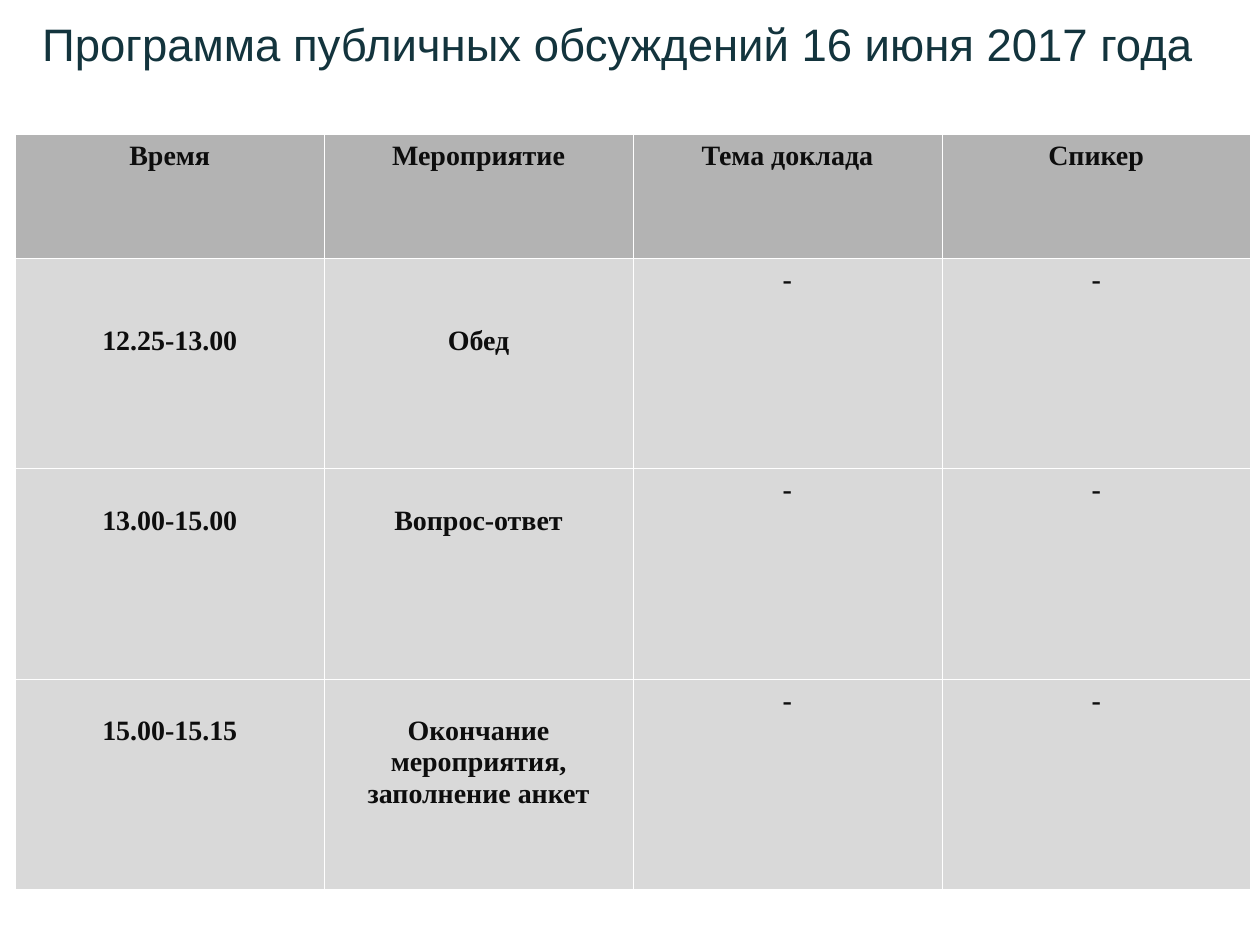
import pptx
import pptx.dml.color
import pptx.enum.text
import pptx.oxml
import pptx.oxml.ns
import pptx.util
from pptx.util import Cm, Pt

RGBColor = pptx.dml.color.RGBColor
PP_ALIGN = pptx.enum.text.PP_ALIGN
MSO_ANCHOR = pptx.enum.text.MSO_ANCHOR

TITLE_COLOR = RGBColor(0x13, 0x34, 0x3D)
TEXT_COLOR = RGBColor(0x0D, 0x0D, 0x0D)
HEADER_FILL = RGBColor(0xB3, 0xB3, 0xB3)
BODY_FILL = RGBColor(0xD9, 0xD9, 0xD9)
BORDER_COLOR = RGBColor(0xFF, 0xFF, 0xFF)

TITLE_FONT = {"name": "Arial", "size": Pt(26), "bold": False}
CELL_FONT = {"name": "Times New Roman", "size": Pt(16), "bold": True}
TITLE_FRAME = {
    "word_wrap": True,
    "auto_size": pptx.enum.text.MSO_AUTO_SIZE.NONE,
    "vertical_anchor": MSO_ANCHOR.TOP,
    "margin_left": Cm(0.25),
    "margin_right": Cm(0.25),
    "margin_top": Cm(0.13),
    "margin_bottom": Cm(0.13),
}

TITLE = "Программа публичных обсуждений 16 июня 2017 года"
HEADER = ["Время", "Мероприятие", "Тема доклада", "Спикер"]
SESSIONS = [
    ("12.25-13.00", "Обед", 2),
    ("13.00-15.00", "Вопрос-ответ", 1),
    ("15.00-15.15", "Окончание мероприятия, заполнение анкет", 1),
]
LINE_HEIGHT = 0.62


def set_format(obj, values):
    """Set each attribute in values on obj."""
    for name, value in values.items():
        setattr(obj, name, value)


def write_text(tf, text, align, font, color):
    """Write one formatted paragraph into a text frame."""
    tf.text = text
    p = tf.paragraphs[0]
    p.alignment = align
    r = p.runs[0]
    set_format(r.font, font)
    r.font.color.rgb = color


def add_borders(cell):
    """Give a cell a hairline on all four sides."""
    tcPr = cell._tc.get_or_add_tcPr()
    for side in ("lnL", "lnR", "lnT", "lnB"):
        tcPr.append(pptx.oxml.parse_xml(
            f'<a:{side} {pptx.oxml.ns.nsdecls("a")} w="762"><a:solidFill>'
            f'<a:srgbClr val="{BORDER_COLOR}"/></a:solidFill></a:{side}>'))


def fill_cell(cell, text, fill, side_margin, lines_down):
    """Format a cell and start its text the given number of lines down."""
    add_borders(cell)
    cell.fill.solid()
    cell.fill.fore_color.rgb = fill
    set_format(cell, {
        "margin_left": Cm(side_margin),
        "margin_right": Cm(side_margin),
        "margin_top": Cm(0.13 + lines_down * LINE_HEIGHT),
        "margin_bottom": Cm(0.13),
        "vertical_anchor": MSO_ANCHOR.TOP,
    })
    write_text(cell.text_frame, text, PP_ALIGN.CENTER, CELL_FONT, TEXT_COLOR)


def place_title(s, left, top, width, height):
    """Place the slide title in the given box."""
    sp = s.shapes.title
    set_format(sp, {"left": left, "top": top, "width": width, "height": height})
    set_format(sp.text_frame, TITLE_FRAME)
    write_text(sp.text_frame, TITLE, PP_ALIGN.LEFT, TITLE_FONT, TITLE_COLOR)


def add_programme(s, left, top, width, height):
    """Add the programme table in the given box."""
    rows, cols = len(SESSIONS) + 1, len(HEADER)
    table = s.shapes.add_table(rows, cols, left, top, width, height).table
    header_height = Cm(2.5)
    for col in table.columns:
        col.width = width // cols
    for i, row in enumerate(table.rows):
        row.height = (height - header_height) // len(SESSIONS) if i else header_height
    for j, text in enumerate(HEADER):
        fill_cell(table.cell(0, j), text, HEADER_FILL, 0.25, 0)
    for i, (time, event, lines_down) in enumerate(SESSIONS, 1):
        for j, text in enumerate((time, event, "-", "-")):
            fill_cell(table.cell(i, j), text, BODY_FILL, 0.1, lines_down if j < 2 else 0)


def main():
    """Build the programme slide and save it."""
    prs = pptx.Presentation()
    prs.slide_width, prs.slide_height = Cm(25.4), Cm(19.05)
    s = prs.slides.add_slide(prs.slide_layouts[5])
    place_title(s, Cm(0.6), Cm(0.2), Cm(24.6), Cm(2))
    add_programme(s, Cm(0.31), Cm(2.7), Cm(24.9), Cm(15.22))
    prs.save("out.pptx")


if __name__ == "__main__":
    main()
